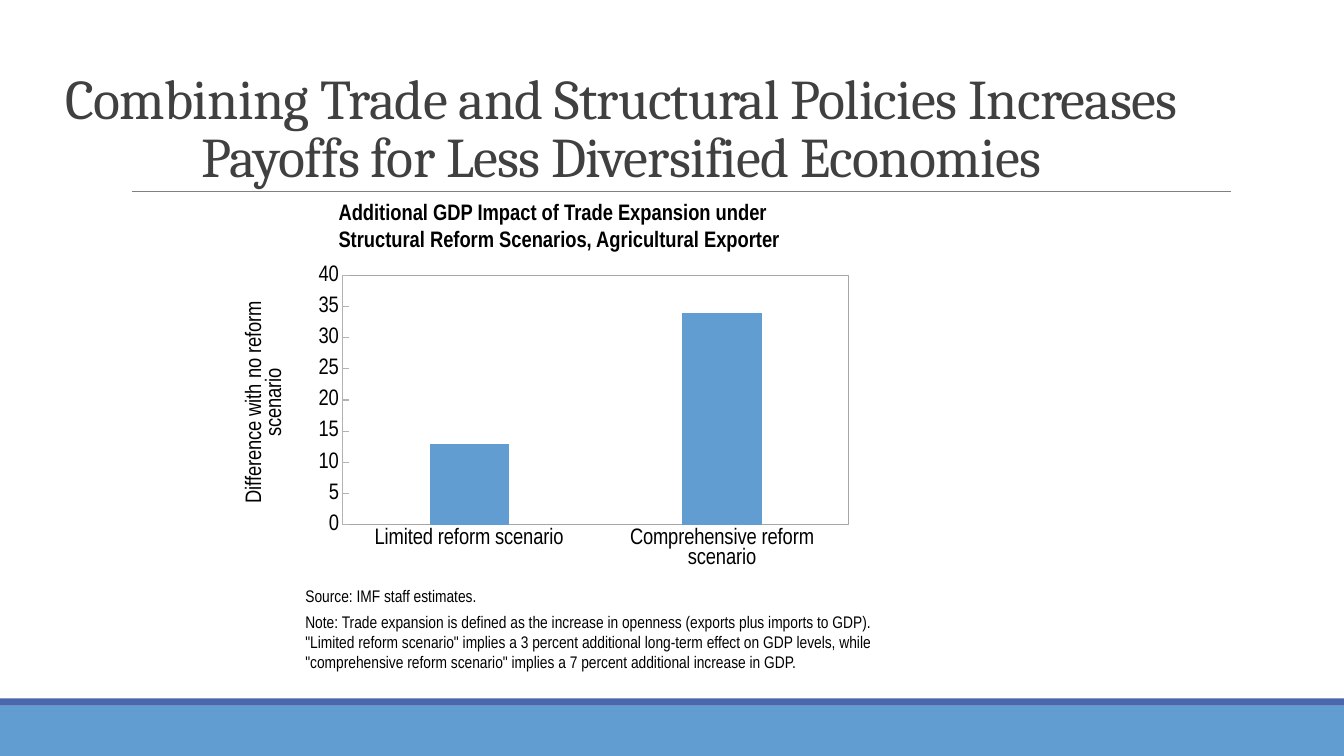
from lxml.etree import SubElement, fromstring
from pptx import Presentation
from pptx.chart.data import CategoryChartData
from pptx.dml.color import RGBColor
from pptx.enum.chart import XL_CHART_TYPE, XL_TICK_MARK
from pptx.enum.shapes import MSO_CONNECTOR, MSO_SHAPE
from pptx.enum.text import MSO_ANCHOR, MSO_AUTO_SIZE, PP_ALIGN
from pptx.oxml import parse_xml
from pptx.oxml.ns import nsdecls, qn
from pptx.util import Inches, Pt

WIDE, HIGH = 13.33, 7.5
SANS, SERIF = "Arial Narrow", "Cambria"
BLUE, NAVY, BLACK, WHITE = "629DD1", "4A66AC", "000000", "FFFFFF"


def color(code):
    return RGBColor.from_string(code)


def style(font, size, name=SANS, code=BLACK, bold=False):
    font.size, font.name, font.bold = Pt(size), name, bold
    font.color.rgb = color(code)


def place(box):
    return [Inches(part) for part in box]


def block(slide, box, code):
    shape = slide.shapes.add_shape(MSO_SHAPE.RECTANGLE, *place(box))
    shape.shadow.inherit = False
    shape.fill.solid()
    shape.fill.fore_color.rgb = color(code)
    shape.line.fill.background()
    return shape


def label(slide, box, text, size, bold=False):
    frame = block(slide, box, WHITE).text_frame
    frame.word_wrap = True
    frame.vertical_anchor = MSO_ANCHOR.TOP
    para = frame.paragraphs[0]
    para.alignment = PP_ALIGN.LEFT
    run = para.add_run()
    run.text = text
    style(run.font, size, bold=bold)


def footer(slide, top):
    """Draw the two bands from top down to the slide's lower edge."""
    block(slide, (0, top + 0.07, WIDE, HIGH - top - 0.07), BLUE)
    block(slide, (0, top, WIDE, 0.07), NAVY)


def rule(slide, left, top, width):
    line = slide.shapes.add_connector(
        MSO_CONNECTOR.STRAIGHT, *place((left, top, left + width, top)))
    line.line.color.rgb = color("808080")
    line.line.width = Pt(0.5)
    SubElement(line._element.spPr, qn("a:effectLst"))


def title(slide, box, text):
    shape = slide.shapes.title
    shape.left, shape.top, shape.width, shape.height = place(box)
    frame = shape.text_frame
    frame.word_wrap = True
    frame.auto_size = MSO_AUTO_SIZE.NONE
    frame.vertical_anchor = MSO_ANCHOR.BOTTOM
    para = frame.paragraphs[0]
    para.alignment, para.line_spacing = PP_ALIGN.CENTER, 0.85
    run = para.add_run()
    run.text = text
    style(run.font, 40, SERIF, "404040")
    run.font._element.set("spc", "-50")


def layout(**parts):
    """Build a manual chart layout from shares of the chart's size."""
    inner = '<c:layoutTarget val="inner"/>' if "w" in parts else ""
    modes = "".join(f'<c:{key}Mode val="edge"/>' for key in "xy")
    sizes = "".join(f'<c:{key} val="{val}"/>' for key, val in parts.items())
    return parse_xml(f'<c:layout {nsdecls("c")}><c:manualLayout>{inner}{modes}'
                     f'{sizes}</c:manualLayout></c:layout>')


def set_layout(parent, index, new):
    for old in parent.findall(qn("c:layout")):
        parent.remove(old)
    parent.insert(index, new)


def outline(fill, line=None):
    edge = (f'<a:ln w="9525"><a:solidFill><a:srgbClr val="{line}"/>'
            '</a:solidFill></a:ln>' if line else '<a:ln><a:noFill/></a:ln>')
    return fromstring(f'<c:spPr {nsdecls("c", "a")}><a:solidFill>'
                      f'<a:srgbClr val="{fill}"/></a:solidFill>{edge}</c:spPr>')


def columns(slide, box):
    data = CategoryChartData()
    data.categories = ["Limited reform scenario",
                       "Comprehensive reform scenario"]
    data.add_series("Series 1", (13, 34))
    chart = slide.shapes.add_chart(
        XL_CHART_TYPE.COLUMN_STACKED, *place(box), data).chart
    chart.has_legend = chart.has_title = False
    style(chart.font, 16)

    plot = chart.plots[0]
    plot.gap_width, plot.overlap, plot.vary_by_categories = 219, 100, False
    fill = plot.series[0].format.fill
    fill.solid()
    fill.fore_color.rgb = color(BLUE)

    cats, vals = chart.category_axis, chart.value_axis
    for axis, tick, code in ((cats, XL_TICK_MARK.NONE, "A6A6A6"),
                             (vals, XL_TICK_MARK.INSIDE, "B3B3B3")):
        axis.has_major_gridlines = False
        axis.major_tick_mark = tick
        axis.minor_tick_mark = XL_TICK_MARK.NONE
        style(axis.tick_labels.font, 16)
        axis.format.line.color.rgb = color(code)
        axis.format.line.width = Pt(0.75)
    vals.minimum_scale, vals.maximum_scale, vals.major_unit = 0, 40, 5

    head = vals.axis_title
    para = head.text_frame.paragraphs[0]
    para.alignment = PP_ALIGN.CENTER
    for text in ("Difference with no reform", "scenario"):
        if para.runs:
            para.add_line_break()
        run = para.add_run()
        run.text = text
        style(run.font, 16)
    body = head.text_frame._txBody.bodyPr
    body.set("rot", "-5400000")
    body.set("vert", "horz")
    set_layout(head._element, 1, layout(x=0.01, y=0.14))

    root = chart._chartSpace
    area = root.chart.plotArea
    set_layout(area, 0, layout(x=0.17, y=0.07, w=0.79, h=0.75))
    area.append(outline(WHITE, "A6A6A6"))
    root.chart.addnext(outline(WHITE))


def main():
    deck = Presentation()
    deck.slide_width, deck.slide_height = Inches(WIDE), Inches(HIGH)
    slide = deck.slides.add_slide(deck.slide_layouts[5])
    footer(slide, 6.93)
    rule(slide, 1.31, 1.9, 10.9)
    title(slide, (0.41, 0.33, 11.5, 1.59),
          "Combining Trade and Structural Policies Increases Payoffs "
          "for Less Diversified Economies")
    label(slide, (3.26, 1.92, 5.27, 0.73),
          "Additional GDP Impact of Trade Expansion under Structural Reform "
          "Scenarios, Agricultural Exporter", 16, True)
    columns(slide, (2.32, 2.5, 6.35, 3.3))
    label(slide, (2.93, 5.76, 4.08, 0.22), "Source: IMF staff estimates.", 12)
    label(slide, (2.93, 6.02, 5.84, 0.59),
          "Note: Trade expansion is defined as the increase in openness "
          "(exports plus imports to GDP). \"Limited reform scenario\" implies "
          "a 3 percent additional long-term effect on GDP levels, while "
          "\"comprehensive reform scenario\" implies a 7 percent additional "
          "increase in GDP.", 12)
    deck.save("out.pptx")


if __name__ == "__main__":
    main()
